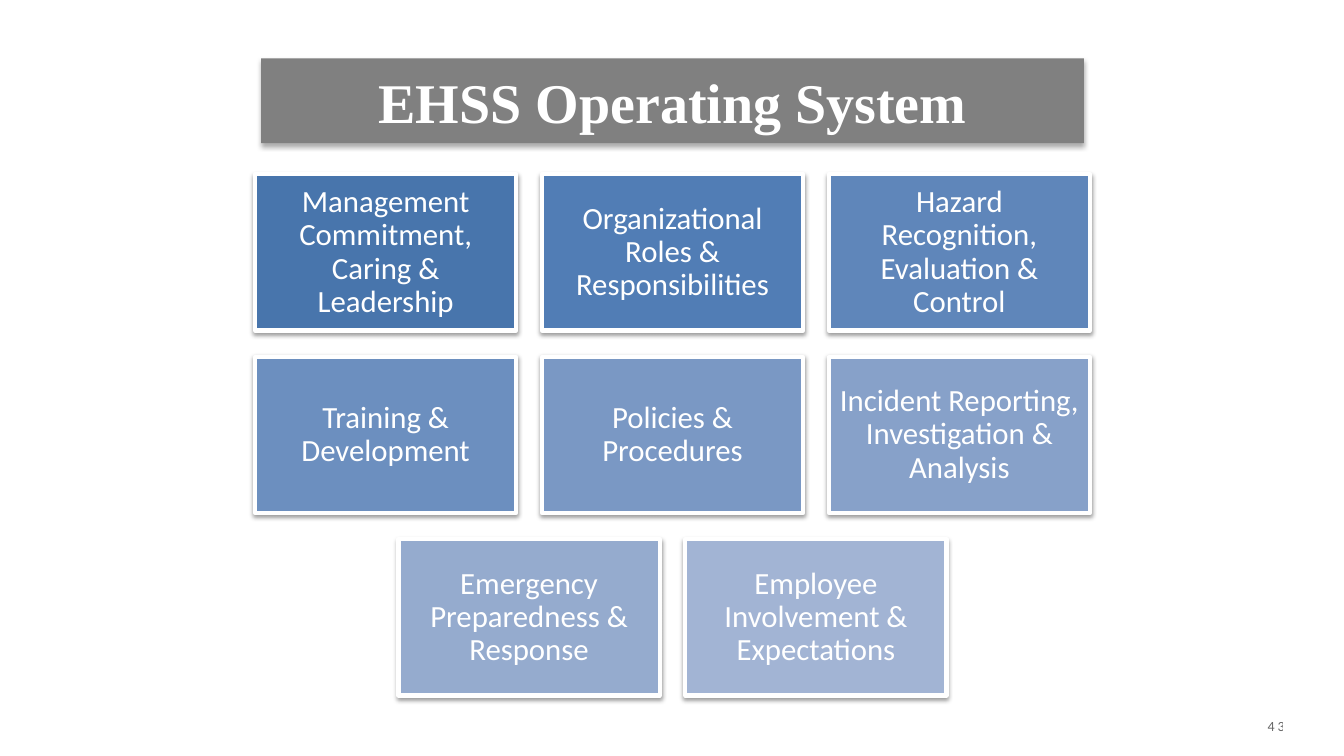
from lxml import etree
from pptx import Presentation
from pptx import util as u
from pptx.dml.color import RGBColor
from pptx.enum import shapes, text
from pptx.oxml import ns

COLORS = {"white": "FFFFFF", "black": "000000", "banner": "808080"}
ELEMENT_ROWS = [
    [("Management Commitment, Caring & Leadership", "4875AC"),
     ("Organizational Roles & Responsibilities", "517DB5"),
     ("Hazard Recognition, Evaluation & Control", "5F86BA")],
    [("Training & Development", "6C8FBF"),
     ("Policies & Procedures", "7A98C4"),
     ("Incident Reporting, Investigation & Analysis", "87A1C9")],
    [("Emergency Preparedness & Response", "95ABCE"),
     ("Employee Involvement & Expectations", "A2B4D4")],
]
SLIDE_WIDTH, SLIDE_HEIGHT = 13.33, 7.5
CARD_WIDTH, CARD_HEIGHT = 2.59, 1.55
COLUMN_STEP, ROW_STEP = 2.845, 1.81
GRID_CENTER, GRID_TOP = 6.67, 1.73


def place(box, left, top, width, height):
    box.left, box.top = u.Inches(left), u.Inches(top)
    box.width, box.height = u.Inches(width), u.Inches(height)


def fill_box(box, color):
    box.fill.solid()
    box.fill.fore_color.rgb = RGBColor.from_string(color)


def add_shadow(box, opacity, blur, distance):
    effects = etree.SubElement(box._element.spPr, ns.qn("a:effectLst"))
    shadow = etree.SubElement(
        effects, ns.qn("a:outerShdw"), blurRad=str(u.Pt(blur)),
        dist=str(u.Pt(distance)), dir="5400000", rotWithShape="0")
    color = etree.SubElement(shadow, ns.qn("a:srgbClr"), val=COLORS["black"])
    etree.SubElement(color, ns.qn("a:alpha"), val=str(opacity * 1000))


def write(box, words, font, size, color, align, bold=False):
    frame = box.text_frame
    frame.word_wrap = True
    frame.auto_size = text.MSO_AUTO_SIZE.NONE
    frame.vertical_anchor = text.MSO_ANCHOR.MIDDLE
    para = frame.paragraphs[0]
    para.text = words
    para.alignment = align
    para.font.name, para.font.size, para.font.bold = font, u.Pt(size), bold
    para.font.color.rgb = RGBColor.from_string(color)
    return para


def add_banner(page, words):
    banner = page.shapes.title
    place(banner, 2.59, 0.58, 8.16, 0.84)
    fill_box(banner, COLORS["banner"])
    banner.line.fill.background()
    add_shadow(banner, 32, 3.5, 2.2)
    write(banner, words, "Times New Roman", 40, COLORS["white"],
          text.PP_ALIGN.CENTER, bold=True)


def add_card(page, left, top, words, color):
    card = page.shapes.add_shape(
        shapes.MSO_SHAPE.RECTANGLE, u.Inches(left), u.Inches(top),
        u.Inches(CARD_WIDTH), u.Inches(CARD_HEIGHT))
    fill_box(card, color)
    card.line.color.rgb = RGBColor.from_string(COLORS["white"])
    card.line.width = u.Pt(3)
    add_shadow(card, 38, 3.1, 1.6)
    frame = card.text_frame
    frame.margin_left = frame.margin_right = u.Inches(0.09)
    frame.margin_top = frame.margin_bottom = u.Inches(0.09)
    para = write(card, words, "Calibri", 22, COLORS["white"],
                 text.PP_ALIGN.CENTER)
    para.line_spacing = 0.9


def add_page_number(page, number):
    box = page.shapes.add_textbox(
        u.Inches(10.92), u.Inches(6.95), u.Inches(1.92), u.Inches(0.5))
    para = write(box, number, "Calibri", 10, COLORS["black"],
                 text.PP_ALIGN.RIGHT)
    para.font._element.set("spc", "200")
    color = para.font._element.find(".//" + ns.qn("a:srgbClr"))
    etree.SubElement(color, ns.qn("a:alpha"), val="60000")


def main():
    deck = Presentation()
    deck.slide_width = u.Inches(SLIDE_WIDTH)
    deck.slide_height = u.Inches(SLIDE_HEIGHT)
    page = deck.slides.add_slide(deck.slide_layouts.get_by_name("Title Only"))
    add_banner(page, "EHSS Operating System")
    for row, cards in enumerate(ELEMENT_ROWS):
        row_width = (len(cards) - 1) * COLUMN_STEP + CARD_WIDTH
        row_left = GRID_CENTER - row_width / 2
        for column, (words, color) in enumerate(cards):
            add_card(page, row_left + column * COLUMN_STEP,
                     GRID_TOP + row * ROW_STEP, words, color)
    add_page_number(page, "43")
    deck.save("out.pptx")


if __name__ == "__main__":
    main()
